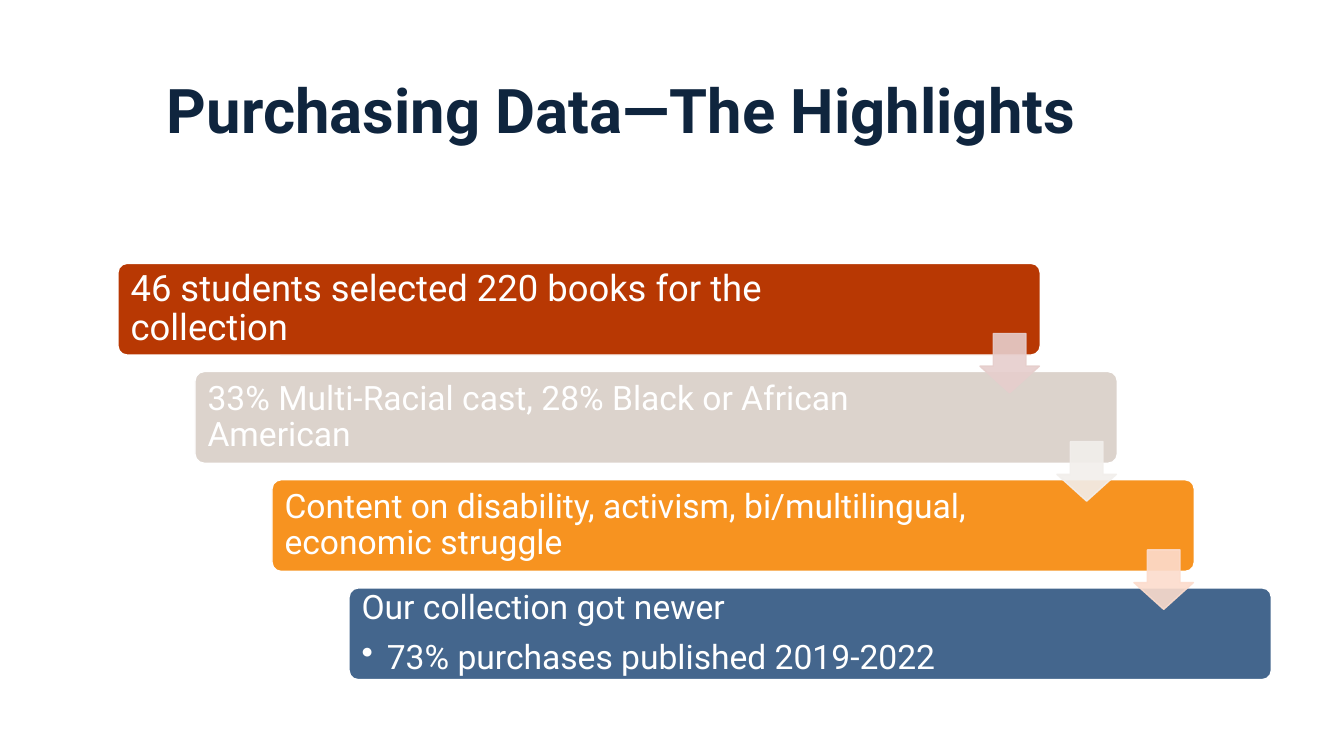
from pptx import Presentation
from pptx.dml.color import RGBColor
from pptx.enum.shapes import MSO_SHAPE
from pptx.enum.text import MSO_ANCHOR, PP_ALIGN
from pptx.oxml.ns import qn
from pptx.util import Inches, Pt
from lxml.etree import SubElement

NAVY = RGBColor(0x0F, 0x25, 0x3E)
WHITE = RGBColor(0xFF, 0xFF, 0xFF)
RUST = RGBColor(0xB8, 0x38, 0x03)
SAND = RGBColor(0xDC, 0xD3, 0xCC)
AMBER = RGBColor(0xF7, 0x93, 0x20)
BLUE = RGBColor(0x44, 0x66, 0x8D)
PINK = RGBColor(0xE6, 0xCE, 0xCC)
PEARL = RGBColor(0xF2, 0xEF, 0xEC)
PEACH = RGBColor(0xFC, 0xDC, 0xCD)

# The slide is a grid of 160 columns by 90 rows
COLS, ROWS = 160, 90
WIDTH, HEIGHT = Inches(13.33), Inches(7.5)


def write(para, text, font="Roboto", size=24, color=WHITE, bold=False,
          align=PP_ALIGN.LEFT, after=0, bullet=None):
    """Fill one paragraph with formatted text."""
    para.alignment = align
    para.line_spacing = 0.9
    para.space_before, para.space_after = Pt(0), Pt(after)
    run = para.add_run()
    run.text = text
    run.font.name, run.font.size = font, Pt(size)
    run.font.color.rgb, run.font.bold = color, bold
    if bullet:
        para.level = 1
        props = para._p.get_or_add_pPr()
        props.set("marL", str(Inches(0.25)))
        props.set("indent", str(-Inches(0.25)))
        SubElement(props, qn("a:buChar")).set("char", bullet)


class Deck:
    def __init__(self):
        self.show = Presentation()
        self.show.slide_width, self.show.slide_height = WIDTH, HEIGHT
        self.slide = self.show.slides.add_slide(self.show.slide_layouts[6])

    def place(self, x, y, w, h):
        col, row = WIDTH / COLS, HEIGHT / ROWS
        return [round(n) for n in (x * col, y * row, w * col, h * row)]

    def shape(self, kind, box, color, edge, adjust, alpha=None):
        item = self.slide.shapes.add_shape(kind, *self.place(*box))
        item.shadow.inherit = False
        item.fill.solid()
        item.fill.fore_color.rgb = color
        item.line.color.rgb = edge
        item.line.width = Pt(1)
        for i, value in enumerate(adjust):
            item.adjustments[i] = value
        if alpha:
            for tone in item._element.spPr.iter(qn("a:srgbClr")):
                SubElement(tone, qn("a:alpha")).set("val", str(alpha * 1000))

    def bar(self, box, color):
        self.shape(MSO_SHAPE.ROUNDED_RECTANGLE, box, color, WHITE, [0.1])

    def arrow(self, box, color):
        self.shape(MSO_SHAPE.DOWN_ARROW, box, color, color, [0.55, 0.45], 90)

    def text(self, box, lines, inset=1.2, right=None):
        frame = self.slide.shapes.add_textbox(*self.place(*box)).text_frame
        frame.word_wrap = True
        frame.vertical_anchor = MSO_ANCHOR.MIDDLE
        pad, end, _, rise = self.place(inset, right or inset, 0, inset)
        end = round((right or inset) * WIDTH / COLS)
        frame.margin_left, frame.margin_right = pad, end
        frame.margin_top = frame.margin_bottom = rise
        for i, (words, style) in enumerate(lines):
            para = frame.add_paragraph() if i else frame.paragraphs[0]
            write(para, words, **style)


# Each step: bar colour, text width in columns, lines
STEPS = [
    (RUST, 97, [("46 students selected 220 books for the collection",
                 dict(size=26))]),
    (SAND, 92.9, [("33% Multi-Racial cast, 28% Black or African American", {})]),
    (AMBER, 92.9, [("Content on disability, activism, bi/multilingual, "
                    "economic struggle", {})]),
    (BLUE, 92.9, [("Our collection got newer", dict(after=9.8)),
                  ("73% purchases published 2019-2022", dict(bullet="•"))]),
]
ARROWS = [PINK, PEARL, PEACH]
RIGHT, DOWN = 9.17, 12.88


def main():
    deck = Deck()

    # Title
    deck.text((11, 4.8, 138, 17.4),
              [("Purchasing Data—The Highlights",
                dict(size=44, color=NAVY, bold=True, align=PP_ALIGN.CENTER))],
              right=13.2)

    # Staircase of bars
    for i, (color, wide, lines) in enumerate(STEPS):
        x, y = 14.04 + i * RIGHT, 31.35 + i * DOWN
        deck.bar((x, y, 109.8, 10.92), color)
        deck.text((x + 0.3, y + 0.3, wide, 10.32), lines)

    # Arrows from each bar to the next
    for i, color in enumerate(ARROWS):
        deck.arrow((116.66 + i * RIGHT, 39.7 + i * DOWN, 7.08, 7.08), color)

    deck.show.save("out.pptx")


if __name__ == "__main__":
    main()
